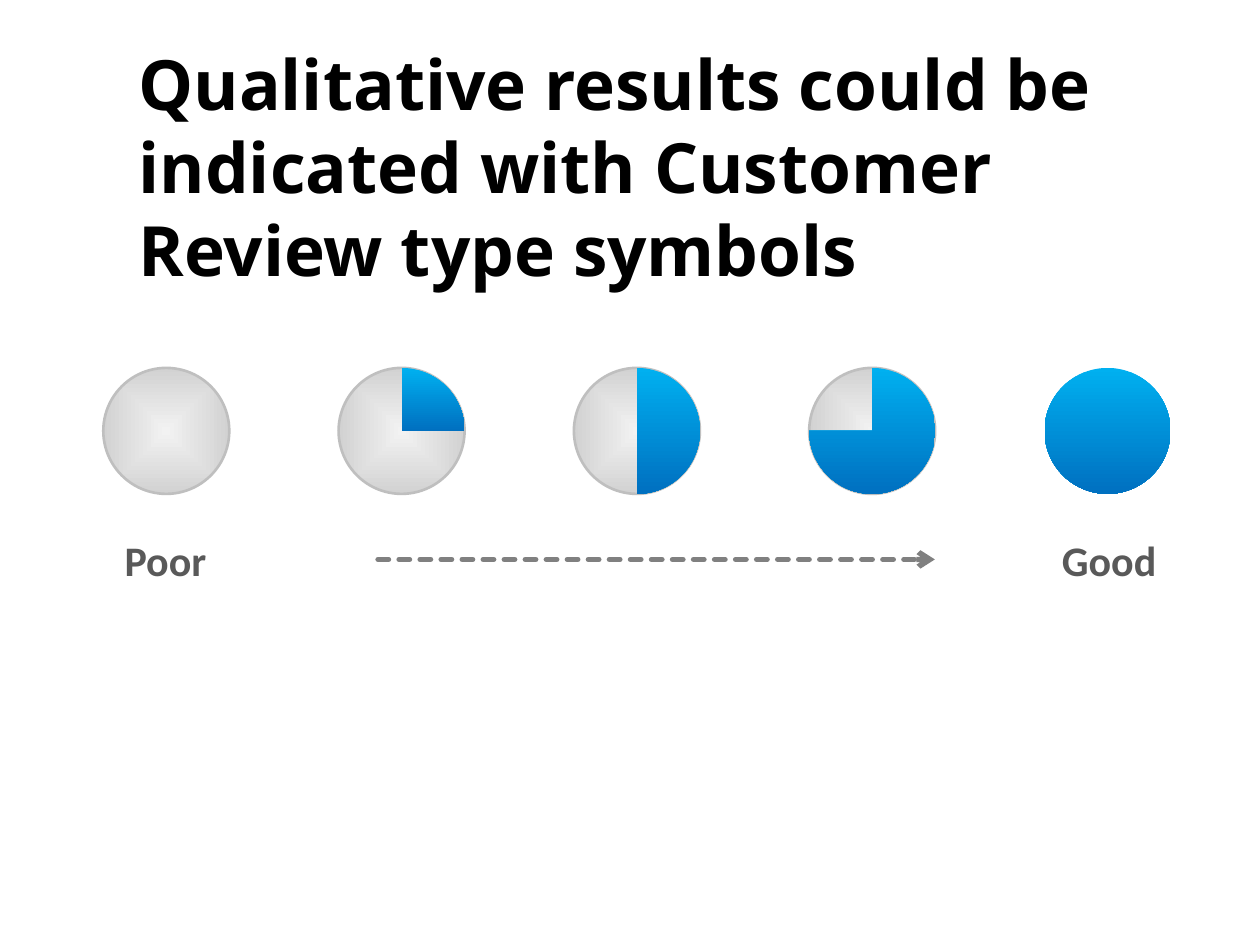
"""Build a slide with a five-step rating scale of part-filled circles."""
from lxml.etree import SubElement
from pptx import Presentation
from pptx.dml.color import RGBColor
from pptx.enum.dml import MSO_LINE_DASH_STYLE as DASH
from pptx.enum.shapes import MSO_CONNECTOR, MSO_SHAPE
from pptx.enum.text import MSO_ANCHOR, MSO_AUTO_SIZE
from pptx.oxml.ns import qn
from pptx.util import Inches, Pt

COLORS = {"light": "F2F2F2", "grey": "D2D2D2", "rim": "BFBFBF",
          "sky": "00B0F0", "blue": "0070C0", "label": "595959",
          "arrow": "808080", "title": "000000"}


def set_gradient(sp, start, end, radial=False):
    """Fill a shape from one colour to another, downwards or from its centre."""
    sp.shadow.inherit = False
    sp.fill.gradient()
    for stop, position, name in zip(sp.fill.gradient_stops, (0, 1), (start, end)):
        stop.position = position
        stop.color.rgb = RGBColor.from_string(COLORS[name])
    sp.fill.gradient_angle = 270
    if radial:
        grad = sp._element.spPr.find(qn("a:gradFill"))
        grad.remove(grad.find(qn("a:lin")))
        shade = SubElement(grad, qn("a:path"), path="shape")
        SubElement(shade, qn("a:fillToRect"), l="50000", t="50000", r="50000", b="50000")


def add_text(box, text, font, size, color):
    """Write one bold paragraph into a text box."""
    tf = s.shapes.add_textbox(*map(Inches, box)).text_frame
    tf.text = text
    f = tf.paragraphs[0].runs[0].font
    f.name, f.size, f.bold = font, Pt(size), True
    f.color.rgb = RGBColor.from_string(COLORS[color])
    return tf


prs = Presentation()
prs.slide_width, prs.slide_height = Inches(10), Inches(7.5)
s = prs.slides.add_slide(prs.slide_layouts[6])

tf = add_text((1, 0.3, 8.29, 2.03),
              "Qualitative results could be indicated with Customer Review type symbols",
              "Open Sans", 39.6, "title")
tf.word_wrap = True
tf.vertical_anchor = MSO_ANCHOR.MIDDLE

left, right, top, size = 0.82, 8.29, 2.92, 1
radius = size / 2
pitch = (right - left) / 4
for quarters in range(5):
    x = left + quarters * pitch
    sp = s.shapes.add_shape(MSO_SHAPE.OVAL, Inches(x), Inches(top), Inches(size), Inches(size))
    if quarters == 4:
        set_gradient(sp, "sky", "blue")
        sp.line.fill.background()
        continue
    set_gradient(sp, "light", "grey", radial=True)
    sp.line.color.rgb = RGBColor.from_string(COLORS["rim"])
    sp.line.width = Pt(1.5)
    if quarters == 0:
        continue
    cx, cy = x + radius, top + radius
    compass = [(cx, top), (cx + radius, cy), (cx, top + size), (x, cy)]
    builder = s.shapes.build_freeform(Inches(cx), Inches(cy))
    builder.add_line_segments([(Inches(px), Inches(py)) for px, py in compass[:quarters + 1]])
    sector = builder.convert_to_shape()
    set_gradient(sector, "sky", "blue")
    sector.line.fill.background()
    outline = next(sector._element.iter(qn("a:path")))
    first, *chords = outline.findall(qn("a:lnTo"))
    for chord in chords:
        outline.remove(chord)
    arc = SubElement(outline, qn("a:arcTo"), wR=str(Inches(radius)), hR=str(Inches(radius)),
                     stAng="16200000", swAng=str(quarters * 5400000))
    first.addnext(arc)

for x, width, text in ((0.89, 0.86, "Poor"), (8.33, 0.96, "Good")):
    tf = add_text((x, 4.19, width, 0.5), text, "Calibri", 24, "label")
    tf.word_wrap = False
    tf.auto_size = MSO_AUTO_SIZE.SHAPE_TO_FIT_TEXT

arrow = s.shapes.add_connector(MSO_CONNECTOR.STRAIGHT, Inches(3), Inches(4.44),
                               Inches(7.42), Inches(4.44))
arrow.line.color.rgb = RGBColor.from_string(COLORS["arrow"])
arrow.line.width = Pt(3)
arrow.line.dash_style = DASH.SQUARE_DOT
ln = arrow._element.spPr.find(qn("a:ln"))
ln.set("cap", "rnd")
ln.find(qn("a:prstDash")).set("val", "sysDash")
SubElement(ln, qn("a:tailEnd"), type="arrow")
SubElement(arrow._element.spPr, qn("a:effectLst"))

prs.save("out.pptx")
